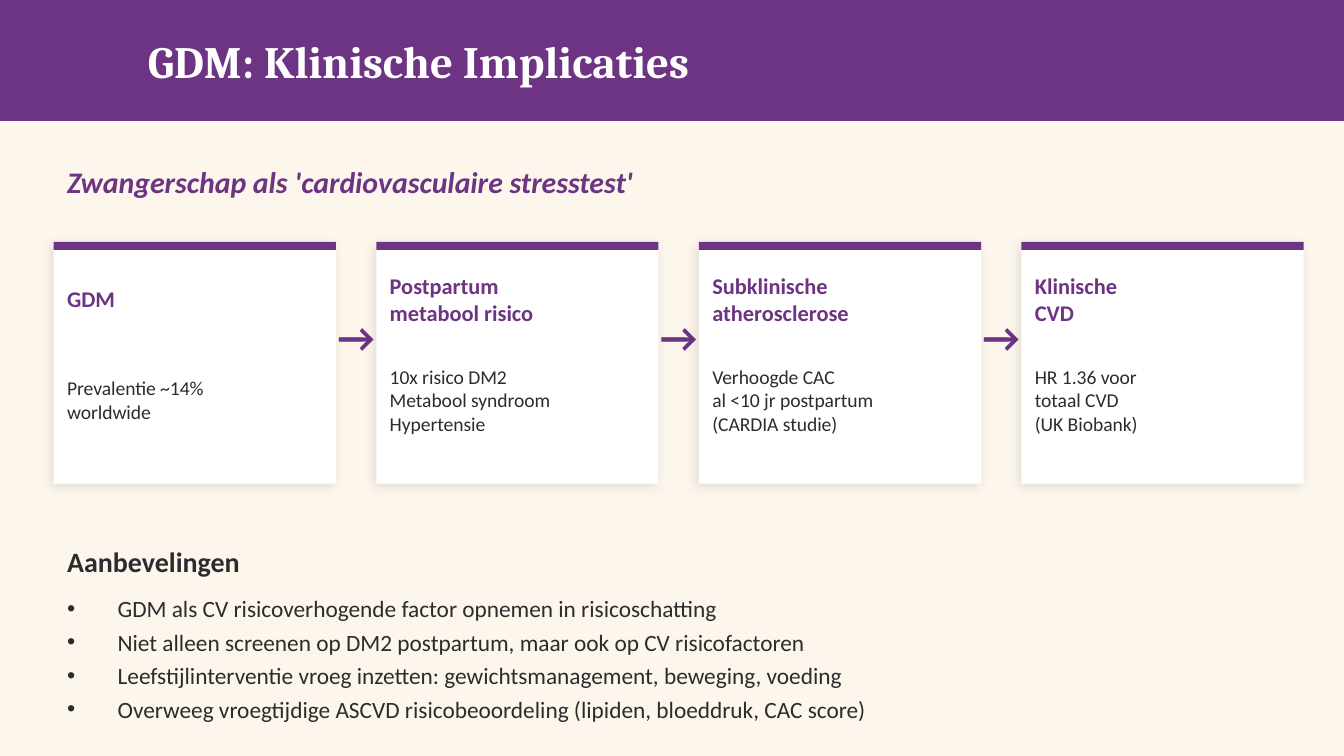
from lxml import etree
from pptx import Presentation
from pptx.dml.color import RGBColor
from pptx.enum import shapes, text
from pptx.oxml import ns
from pptx.util import Inches, Pt

PLUM, INK, WHITE, CREAM = "6C3483", "2C2C2E", "FFFFFF", "FDF6EC"

STEPS = [
    (["GDM"], ["Prevalentie ~14%", "worldwide"]),
    (["Postpartum", "metabool risico"],
     ["10x risico DM2", "Metabool syndroom", "Hypertensie"]),
    (["Subklinische", "atherosclerose"],
     ["Verhoogde CAC", "al <10 jr postpartum", "(CARDIA studie)"]),
    (["Klinische", "CVD"], ["HR 1.36 voor", "totaal CVD", "(UK Biobank)"]),
]
ADVICE = [
    "GDM als CV risicoverhogende factor opnemen in risicoschatting",
    "Niet alleen screenen op DM2 postpartum, maar ook op CV risicofactoren",
    "Leefstijlinterventie vroeg inzetten: gewichtsmanagement, beweging, voeding",
    "Overweeg vroegtijdige ASCVD risicobeoordeling (lipiden, bloeddruk, CAC score)",
]


def color(code):
    return RGBColor.from_string(code)


def add(parent, tag, **attrs):
    node = etree.SubElement(parent, ns.qn(tag))
    for key, value in attrs.items():
        node.set(key, str(value))
    return node


class Deck:
    def __init__(self):
        self.prs = Presentation()
        self.prs.slide_width = Inches(10)
        self.prs.slide_height = Inches(10 * 9 / 16)
        self.slide = self.prs.slides.add_slide(self.prs.slide_layouts[1])
        fill = self.slide.background.fill
        fill.solid()
        fill.fore_color.rgb = color(CREAM)

    def rect(self, x, y, w, h, fill, shade=False):
        box = self.slide.shapes.add_shape(
            shapes.MSO_SHAPE.RECTANGLE, Inches(x), Inches(y), Inches(w), Inches(h))
        box.fill.solid()
        box.fill.fore_color.rgb = color(fill)
        box.line.fill.background()
        box.shadow.inherit = False
        if shade:
            effects = box._element.spPr.find(ns.qn("a:effectLst"))
            outer = add(effects, "a:outerShdw", blurRad=Pt(6), dist=Pt(2),
                        dir=135 * 60000, algn="bl", rotWithShape=0)
            add(add(outer, "a:srgbClr", val="000000"), "a:alpha", val=10000)
        return box

    def back(self, shape):
        self.slide.shapes._spTree.insert(2, shape._element)

    def text(self, x, y, w, h, lines, size, ink, bold=False, italic=False,
             face="Calibri", align=text.PP_ALIGN.LEFT, holder=None, bullet=False):
        area = [Inches(v) for v in (x, y, w, h)]
        box = holder or self.slide.shapes.add_textbox(*area)
        box.left, box.top, box.width, box.height = area
        frame = box.text_frame
        frame.word_wrap = True
        frame.auto_size = text.MSO_AUTO_SIZE.NONE
        frame.vertical_anchor = text.MSO_ANCHOR.MIDDLE
        frame.margin_left = frame.margin_right = 0
        frame.margin_top = frame.margin_bottom = 0
        for i, line in enumerate(lines):
            para = frame.add_paragraph() if i else frame.paragraphs[0]
            para.alignment = align
            para.space_before = Pt(0)
            if bullet:
                para.space_after = Pt(3)
                props = para._p.get_or_add_pPr()
                props.set("marL", str(Inches(3 / 8)))
                props.set("indent", str(-Inches(3 / 8)))
                add(props, "a:buChar", char="•")
            run = para.add_run()
            run.text = line
            font = run.font
            font.name, font.size = face, Pt(size)
            font.bold, font.italic = bold, italic
            font.color.rgb = color(ink)

    def card(self, x, head, facts):
        self.rect(x, 1.8, 2.1, 1.8, WHITE, shade=True)
        self.rect(x, 1.8, 2.1, 0.06, PLUM)
        self.text(x + 0.1, 1.95, 1.9, 0.55, head, 12, PLUM, bold=True)
        self.text(x + 0.1, 2.5, 1.9, 0.95, facts, 10.5, INK)

    def arrow(self, x):
        self.text(x, 2.3, 0.3, 0.4, ["→"], 22, PLUM, bold=True,
                  align=text.PP_ALIGN.CENTER)


def main():
    deck = Deck()
    title, body = deck.slide.placeholders
    deck.back(deck.rect(0, 0, 10, 0.9, PLUM))
    deck.text(1.1, 0.15, 8, 0.6, ["GDM: Klinische Implicaties"], 24, WHITE,
              bold=True, face="Cambria", holder=title)
    deck.text(0.5, 1.15, 9, 0.4, ["Zwangerschap als 'cardiovasculaire stresstest'"],
              16, PLUM, bold=True, italic=True)
    for i, (head, facts) in enumerate(STEPS):
        left = 0.4 + 2.4 * i
        if i:
            deck.arrow(left - 0.3)
        deck.card(left, head, facts)
    deck.text(0.5, 4, 9, 0.35, ["Aanbevelingen"], 15, INK, bold=True)
    deck.text(0.5, 4.35, 9, 1.1, ADVICE, 12.5, INK, holder=body, bullet=True)
    deck.prs.save("out.pptx")


if __name__ == "__main__":
    main()
